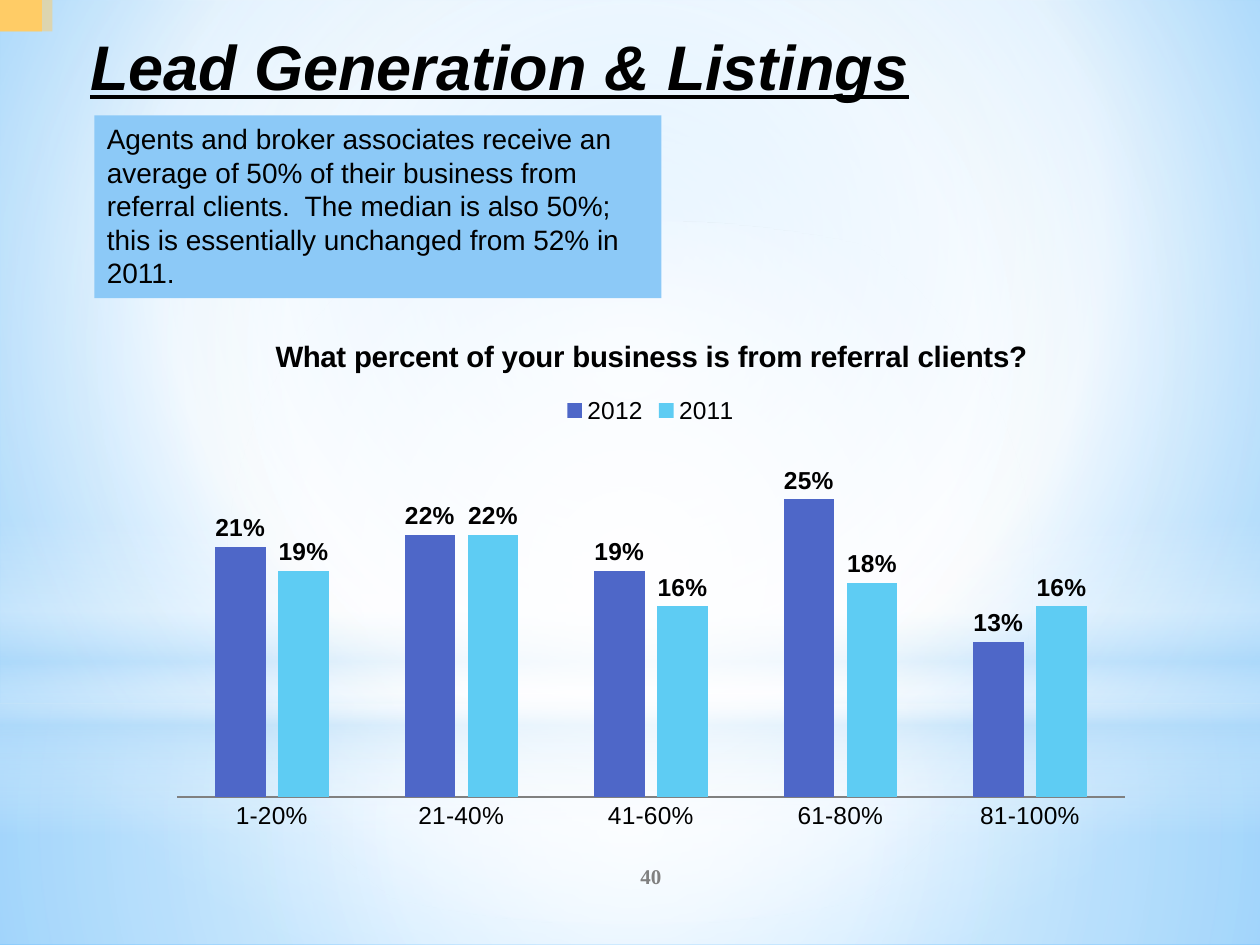
from dataclasses import dataclass
from lxml.etree import SubElement
from pptx import Presentation
from pptx.chart.data import CategoryChartData
from pptx.dml.color import RGBColor
from pptx.enum.chart import XL_CHART_TYPE, XL_LABEL_POSITION, XL_LEGEND_POSITION, XL_TICK_MARK
from pptx.enum.shapes import MSO_SHAPE
from pptx.enum.text import MSO_ANCHOR, PP_ALIGN
from pptx.oxml import parse_xml
from pptx.oxml.ns import nsdecls, qn
from pptx.util import Pt

COLORS = {
    "white": "FFFFFF", "sky": "B4DCFA", "glow": "9ED5FF", "edge": "5BB9FF",
    "amber": "FFCC66", "panel": "8CC9F7", "black": "000000", "gray": "808080",
    "indigo": "4E67C8", "cyan": "5ECCF3",
}
CENTER = (50, 50, 50, 50)


def rgb(name):
    """Return the named colour."""
    return RGBColor.from_string(COLORS[name])


def gradient(stops, focus=None):
    """Return a gradient fill, circular around focus or else running downwards."""
    marks = "".join(
        f'<a:gs pos="{position * 1000}"><a:srgbClr val="{COLORS[color]}">'
        f'<a:alpha val="{alpha * 1000}"/></a:srgbClr></a:gs>'
        for position, color, alpha in stops
    )
    shade = '<a:lin ang="5400000" scaled="0"/>'
    if focus:
        sides = " ".join(f'{side}="{value * 1000}"' for side, value in zip("ltrb", focus))
        shade = f'<a:path path="circle"><a:fillToRect {sides}/></a:path>'
    return parse_xml(
        f'<a:gradFill {nsdecls("a")} rotWithShape="1"><a:gsLst>{marks}</a:gsLst>{shade}</a:gradFill>'
    )


@dataclass
class SlideBuilder:
    """Holds the style and the current slide."""

    page: object
    font: str = "Arial"

    def background(self, stops, focus):
        """Fill the slide background with a gradient."""
        frame = parse_xml(f'<p:bg {nsdecls("p", "a")}><p:bgPr><a:effectLst/></p:bgPr></p:bg>')
        frame[0].insert(0, gradient(stops, focus))
        self.page._element.cSld.insert(0, frame)

    def shape(self, bounds, color=None, alpha=100, kind=MSO_SHAPE.RECTANGLE):
        """Add a borderless shape with a plain fill."""
        shape = self.page.shapes.add_shape(kind, *map(Pt, bounds))
        shape.shadow.inherit = False
        shape.line.fill.background()
        if color is None:
            shape.fill.background()
            return shape
        shape.fill.solid()
        shape.fill.fore_color.rgb = rgb(color)
        if alpha < 100:
            tint = shape._element.spPr.find(qn("a:solidFill"))[0]
            SubElement(tint, qn("a:alpha"), val=str(alpha * 1000))
        return shape

    def glow(self, bounds, stops, focus=None, kind=MSO_SHAPE.RECTANGLE):
        """Add a shape with a gradient fill."""
        properties = self.shape(bounds, kind=kind)._element.spPr
        properties.replace(properties.find(qn("a:noFill")), gradient(stops, focus))

    def label(self, box, text, size, color="black", font=None, align=PP_ALIGN.LEFT,
              anchor=MSO_ANCHOR.TOP, bold=False, italic=False, underline=False):
        """Put one formatted paragraph into a box."""
        frame = box.text_frame
        frame.word_wrap = True
        frame.vertical_anchor = anchor
        frame.text = text
        para = frame.paragraphs[0]
        para.alignment = align
        style = para.runs[0].font
        style.name, style.size, style.color.rgb = font or self.font, Pt(size), rgb(color)
        style.bold, style.italic, style.underline = bold, italic, underline

    def text(self, bounds, text, size, **style):
        """Add a text box."""
        box = self.page.shapes.add_textbox(*map(Pt, bounds))
        self.label(box, text, size, **style)

    def columns(self, bounds, title, categories, series):
        """Add a clustered column chart from (name, values, colour) rows."""
        data = CategoryChartData(number_format="0%")
        data.categories = categories
        for name, values, _ in series:
            data.add_series(name, values)
        chart = self.page.shapes.add_chart(
            XL_CHART_TYPE.COLUMN_CLUSTERED, *map(Pt, bounds), data).chart
        chart.font.name, chart.font.size = self.font, Pt(14)
        chart.font.color.rgb = rgb("black")
        clear = parse_xml(
            f'<c:spPr {nsdecls("c", "a")}><a:noFill/><a:ln><a:noFill/></a:ln></c:spPr>')
        chart._chartSpace.find(qn("c:txPr")).addprevious(clear)

        chart.has_title = True
        chart.chart_title.include_in_layout = False
        chart.chart_title.text_frame.text = title
        heading = chart.chart_title.text_frame.paragraphs[0].runs[0].font
        heading.name, heading.size, heading.bold = self.font, Pt(16.8), True
        heading.color.rgb = rgb("black")
        chart.has_legend = True
        chart.legend.position = XL_LEGEND_POSITION.TOP
        chart.legend.include_in_layout = False

        chart.value_axis.visible = False
        chart.value_axis.has_major_gridlines = False
        chart.value_axis.minimum_scale, chart.value_axis.maximum_scale = 0, 0.3
        chart.category_axis.major_tick_mark = XL_TICK_MARK.NONE
        chart.category_axis.format.line.color.rgb = rgb("gray")

        plot = chart.plots[0]
        plot.gap_width, plot.overlap, plot.vary_by_categories = 150, -25, False
        for bars, (_, _, color) in zip(plot.series, series):
            bars.format.fill.solid()
            bars.format.fill.fore_color.rgb = rgb(color)
            labels = bars.data_labels
            labels.show_value = True
            labels.number_format, labels.number_format_is_linked = "0%", False
            labels.position = XL_LABEL_POSITION.OUTSIDE_END
            labels.font.name, labels.font.size, labels.font.bold = self.font, Pt(14), True
            labels.font.color.rgb = rgb("black")


def main():
    """Build the slide and save it."""
    deck = Presentation()
    deck.slide_width, deck.slide_height = Pt(720), Pt(540)
    slide = SlideBuilder(deck.slides.add_slide(deck.slide_layouts[6]))

    slide.background(
        [(0, "glow", 100), (60, "white", 100), (100, "edge", 100)], (20, 10, 20, 60))
    slide.glow((0, 402, 720, 138),
               [(0, "white", 91), (37, "white", 76), (100, "sky", 79)], CENTER)
    slide.glow((0, 0, 720, 402),
               [(0, "white", 89), (48, "white", 62), (100, "sky", 79)], CENTER)
    slide.glow((0, 297, 720, 180),
               [(0, "white", 0), (29, "white", 30), (45, "sky", 40),
                (55, "white", 26), (65, "sky", 60), (100, "white", 0)])
    slide.glow((0, 126, 720, 402), [(0, "white", 100), (56, "white", 0)],
               CENTER, MSO_SHAPE.OVAL)
    slide.shape((0, 0, 30, 18), "amber", 50)
    slide.shape((0, 0, 24, 18), "amber")

    slide.text((300, 486, 144, 28.8), "40", 12, color="gray", font="Times New Roman",
               align=PP_ALIGN.CENTER, anchor=MSO_ANCHOR.MIDDLE, bold=True)
    slide.text((44.4, 12, 639.6, 54), "Lead Generation & Listings", 36,
               bold=True, italic=True, underline=True)
    panel = slide.shape((54, 66, 324, 104.4), "panel")
    slide.label(panel, "Agents and broker associates receive an average of 50% of their "
                "business from referral clients.  The median is also 50%; this is "
                "essentially unchanged from 52% in 2011.", 16)
    slide.columns((90, 180, 564, 300),
                  "What percent of your business is from referral clients?",
                  ["1-20%", "21-40%", "41-60%", "61-80%", "81-100%"],
                  [("2012", (0.21, 0.22, 0.19, 0.25, 0.13), "indigo"),
                   ("2011", (0.19, 0.22, 0.16, 0.18, 0.16), "cyan")])
    deck.save("out.pptx")


if __name__ == "__main__":
    main()
